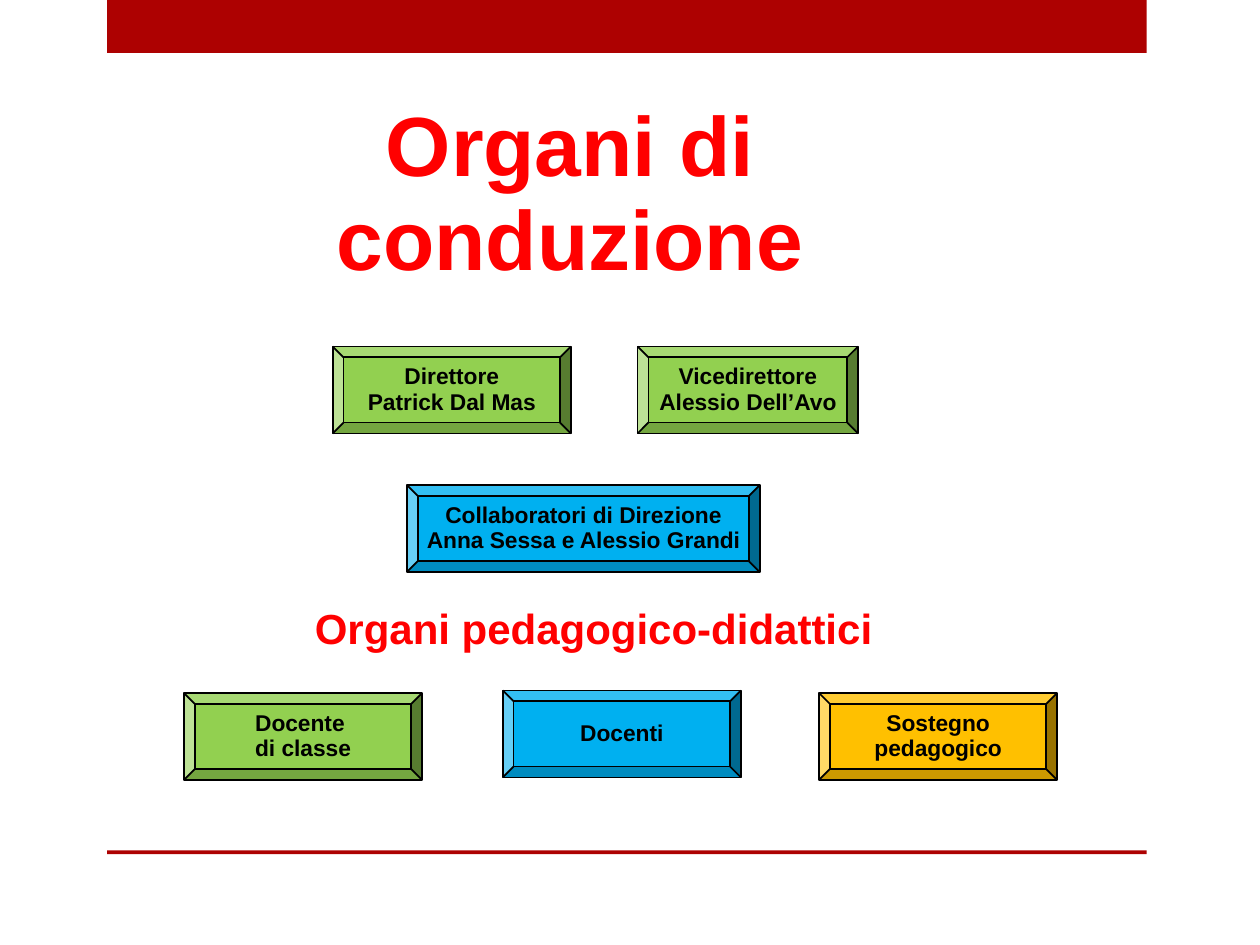
from pptx import Presentation
from pptx.dml.color import RGBColor as Rgb
from pptx.enum.shapes import MSO_SHAPE as Kind
from pptx.enum.text import MSO_ANCHOR as Anchor, PP_ALIGN as Align
from pptx.util import Inches, Pt

HUES = {
    "bar": "AD0101",
    "head": "FF0000",
    "ink": "000000",
    "green": "92D050",
    "blue": "00B0F0",
    "gold": "FFC000",
}


class Chart:
    """Holds the style and the slide, and draws each kind of element."""

    def __init__(self, slide):
        self.slide = slide
        self.font = {"name": "Arial", "bold": True}
        self.para = {"line_spacing": 0.93}

    def hue(self, name):
        return Rgb.from_string(HUES[name])

    def put(self, item, values):
        for key, value in values.items():
            setattr(item, key, value)

    def label(self, frame, lines, size, hue, align):
        frame.text = "\n".join(lines)
        for para in frame.paragraphs:
            self.put(para, {**self.para, "alignment": align})
            for run in para.runs:
                self.put(run.font, {**self.font, "size": Pt(size)})
                run.font.color.rgb = self.hue(hue)

    def shape(self, kind, box, hue):
        item = self.slide.shapes.add_shape(kind, *map(Inches, box))
        item.shadow.inherit = False
        item.fill.solid()
        item.fill.fore_color.rgb = self.hue(hue)
        return item

    def bar(self, top, height):
        item = self.shape(Kind.RECTANGLE, (0.85, top, 8.25, height), "bar")
        item.line.fill.background()

    def title(self, box, text, size, align):
        frame = self.slide.shapes.add_textbox(*map(Inches, box)).text_frame
        frame.word_wrap = True
        self.label(frame, [text], size, "head", align)

    def role(self, left, top, width, hue, *lines):
        item = self.shape(Kind.BEVEL, (left, top, width, 0.69), hue)
        item.adjustments[0] = 0.125
        item.line.color.rgb = self.hue("ink")
        item.line.width = Pt(1)
        frame = item.text_frame
        self.put(frame, {"word_wrap": False, "vertical_anchor": Anchor.MIDDLE})
        self.label(frame, lines, 13, "ink", Align.CENTER)


def main():
    deck = Presentation()
    deck.slide_width, deck.slide_height = Inches(10), Inches(7.5)
    chart = Chart(deck.slides.add_slide(deck.slide_layouts[6]))

    chart.bar(0, 0.42)
    chart.bar(6.75, 0.03)
    chart.title((2.09, 0.76, 4.87, 1.61), "Organi di conduzione", 48, Align.CENTER)
    chart.title((2.4, 4.77, 6.25, 0.48), "Organi pedagogico-didattici", 24, Align.LEFT)

    roles = [
        (2.64, 2.75, 1.89, "green", "Direttore", "Patrick Dal Mas"),
        (5.06, 2.75, 1.75, "green", "Vicedirettore", "Alessio Dell’Avo"),
        (3.23, 3.85, 2.8, "blue", "Collaboratori di Direzione",
         "Anna Sessa e Alessio Grandi"),
        (1.46, 5.5, 1.89, "green", "Docente ", "di classe"),
        (3.99, 5.48, 1.89, "blue", "Docenti"),
        (6.5, 5.5, 1.89, "gold", "Sostegno", "pedagogico"),
    ]
    for role in roles:
        chart.role(*role)

    deck.save("out.pptx")


if __name__ == "__main__":
    main()
